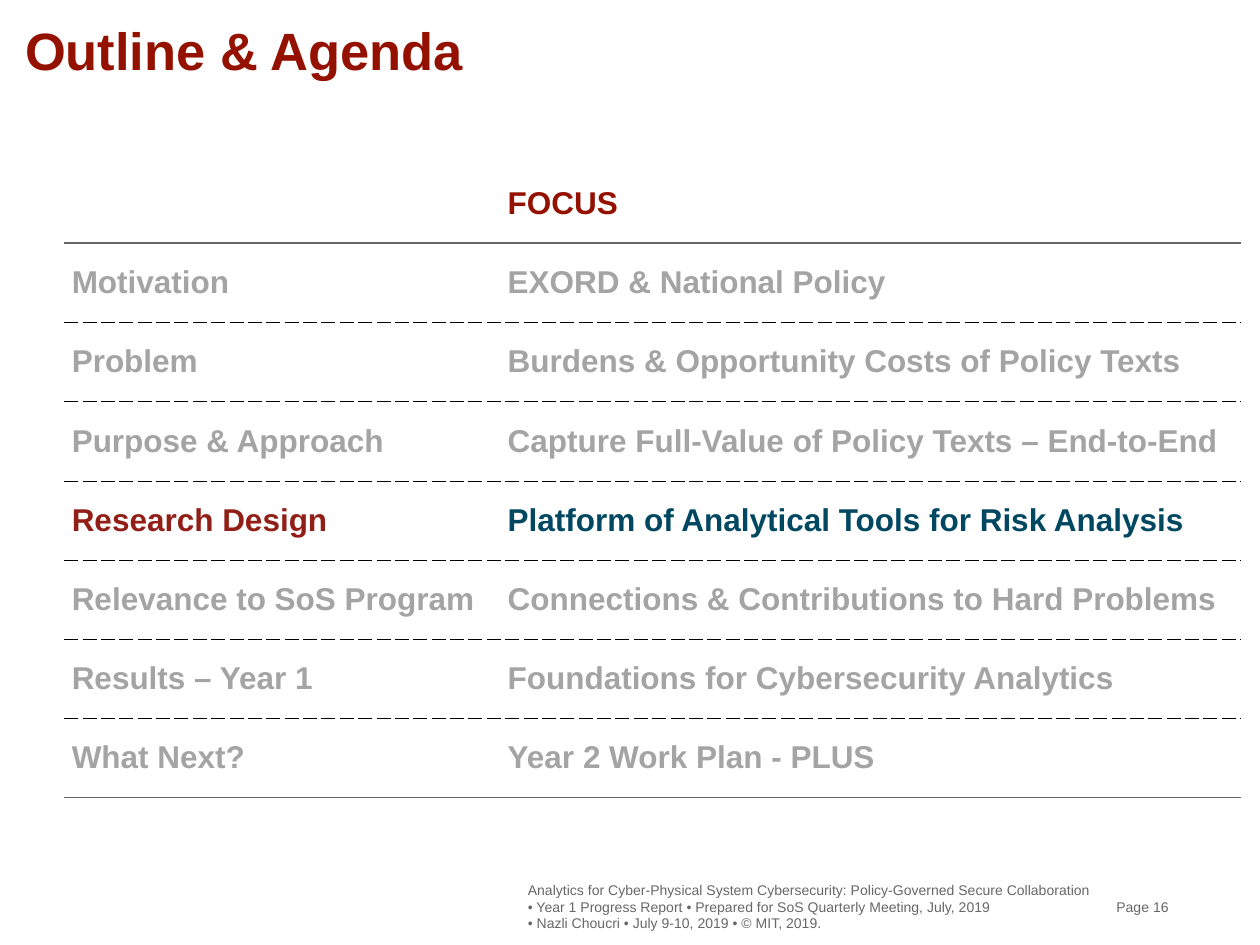
from dataclasses import dataclass
from typing import Optional

from lxml import etree
from pptx import Presentation
from pptx.dml.color import RGBColor
from pptx.enum import text
from pptx.oxml import ns
from pptx.util import Inches, Pt


@dataclass(frozen=True)
class Theme:
    font: str = "Arial"
    red: str = "941100"
    brick: str = "921F17"
    teal: str = "004862"
    faded: str = "A4A4A4"
    gray: str = "676767"
    black: str = "000000"
    title: int = 30
    body: int = 18
    small: int = 8


@dataclass(frozen=True)
class Label:
    left: float
    top: float
    width: float
    height: float
    lines: tuple[str, ...]
    size: int
    color: str
    bold: bool = False
    anchor: text.MSO_ANCHOR = text.MSO_ANCHOR.MIDDLE
    inset: tuple[float, float] = (0.08, 0.04)


@dataclass(frozen=True)
class Rule:
    color: str
    width: float
    dash: str = "solid"


@dataclass(frozen=True)
class Topic:
    name: str
    focus: str
    colors: tuple[str, str]


T = Theme()
SOLID = Rule(T.gray, 1)
DASHED = Rule(T.black, 0.25, "dash")
DIM = (T.faded, T.faded)

LABELS = (
    Label(8.78, 6.96, 0.68, 0.47, ("Page 16",), T.small, T.gray),
    Label(4.11, 6.96, 4.63, 0.47, (
        "Analytics for Cyber-Physical System Cybersecurity: "
        "Policy-Governed Secure Collaboration",
        "• Year 1 Progress Report • Prepared for SoS Quarterly Meeting, July, 2019",
        "• Nazli Choucri • July 9-10, 2019 • © MIT, 2019.",
    ), T.small, T.gray),
    Label(0.2, 0.11, 9.6, 0.53, ("Outline & Agenda",), T.title, T.red, True,
          text.MSO_ANCHOR.BOTTOM, (0, 0)),
)

TOPICS = (
    Topic("", "FOCUS", (T.red, T.red)),
    Topic("Motivation", "EXORD & National Policy", DIM),
    Topic("Problem", "Burdens & Opportunity Costs of Policy Texts", DIM),
    Topic("Purpose & Approach", "Capture Full-Value of Policy Texts – End-to-End", DIM),
    Topic("Research Design", "Platform of Analytical Tools for Risk Analysis",
          (T.brick, T.teal)),
    Topic("Relevance to SoS Program", "Connections & Contributions to Hard Problems", DIM),
    Topic("Results – Year 1", "Foundations for Cybersecurity Analytics", DIM),
    Topic("What Next?", "Year 2 Work Plan - PLUS", DIM),
)


def add_run(para, words: str, size: int, color: str, bold: bool) -> None:
    run = para.add_run()
    run.text = words
    font = run.font
    font.name, font.size, font.bold = T.font, Pt(size), bold
    font.color.rgb = RGBColor.from_string(color)


def add_label(slide, label: Label) -> None:
    box = slide.shapes.add_textbox(
        Inches(label.left), Inches(label.top), Inches(label.width), Inches(label.height))
    frame = box.text_frame
    frame.word_wrap = True
    frame.vertical_anchor = label.anchor
    side, edge = label.inset
    frame.margin_left = frame.margin_right = Inches(side)
    frame.margin_top = frame.margin_bottom = Inches(edge)
    for i, line in enumerate(label.lines):
        para = frame.add_paragraph() if i else frame.paragraphs[0]
        add_run(para, line, label.size, label.color, label.bold)


def set_edge(cell, side: str, rule: Optional[Rule]) -> None:
    """Draw one cell border, or clear it when there is no rule."""
    props = cell._tc.get_or_add_tcPr()
    line = etree.SubElement(props, ns.qn(f"a:ln{side}"))
    if rule is None:
        etree.SubElement(line, ns.qn("a:noFill"))
        return
    line.set("w", str(int(Pt(rule.width))))
    fill = etree.SubElement(line, ns.qn("a:solidFill"))
    etree.SubElement(fill, ns.qn("a:srgbClr")).set("val", rule.color)
    etree.SubElement(line, ns.qn("a:prstDash")).set("val", rule.dash)


def fill_cell(cell, words: str, color: str, above: Optional[Rule], below: Rule) -> None:
    for side, rule in (("L", None), ("R", None), ("T", above), ("B", below)):
        set_edge(cell, side, rule)
    cell.fill.background()
    cell.vertical_anchor = text.MSO_ANCHOR.MIDDLE
    cell.margin_left, cell.margin_right = Inches(0.06), Inches(0.07)
    cell.margin_top = cell.margin_bottom = 0
    para = cell.text_frame.paragraphs[0]
    if words:
        add_run(para, words, T.body, color, True)
    else:
        para.font.size = Pt(T.body)


def add_agenda(slide) -> None:
    count = len(TOPICS)
    grid = slide.shapes.add_table(
        count, 2, Inches(0.51), Inches(1.3), Inches(9.34), Inches(5.03)).table
    grid.first_row = grid.horz_banding = False
    for col, width in zip(grid.columns, (3.46, 5.88)):
        col.width = Inches(width)
    rules = [None, SOLID] + [DASHED] * (count - 2) + [SOLID]
    for r, topic in enumerate(TOPICS):
        for c, words in enumerate((topic.name, topic.focus)):
            fill_cell(grid.cell(r, c), words, topic.colors[c], rules[r], rules[r + 1])


def main() -> None:
    deck = Presentation()
    deck.slide_width, deck.slide_height = Inches(10), Inches(7.5)
    slide = deck.slides.add_slide(deck.slide_layouts[6])
    for label in LABELS:
        add_label(slide, label)
    add_agenda(slide)
    deck.save("out.pptx")


if __name__ == "__main__":
    main()
